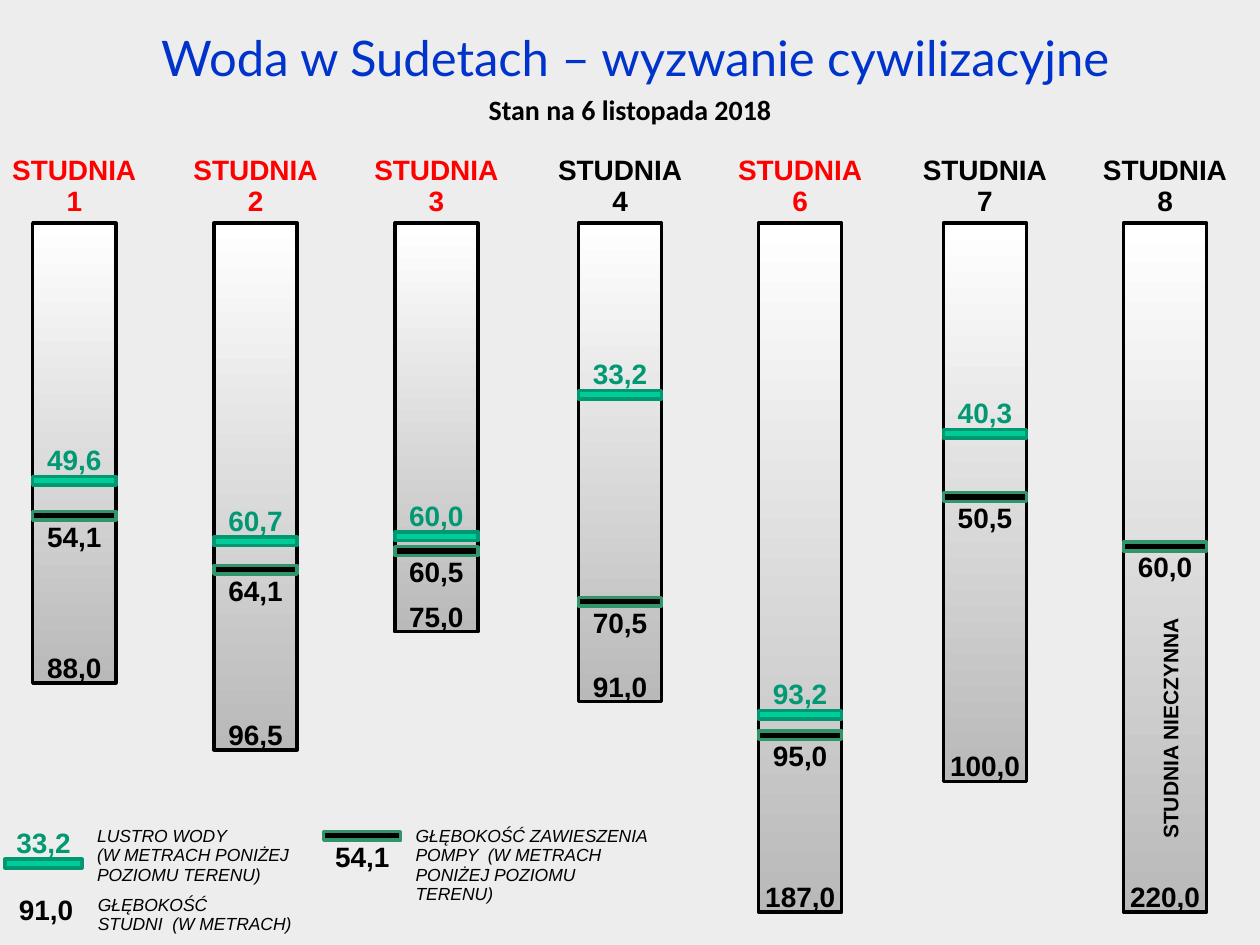
from dataclasses import dataclass
from typing import Optional

from pptx import Presentation
from pptx.dml.color import RGBColor
from pptx.enum.shapes import MSO_SHAPE as Preset
from pptx.enum.text import MSO_AUTO_SIZE as AutoSize, PP_ALIGN as Align
from pptx.util import Pt

BLACK = "000000"
RED = "FF0000"
GREEN = "009973"
WELL_TOP = 127.5
WELL_WIDTH = 47.5
MARK_HEIGHT = 5
LABEL_HEIGHT = 26.6


@dataclass
class Well:
    number: str
    left: float
    height: float
    color: str
    depth: str
    pump: str
    pump_top: float
    water: Optional[str] = None
    water_top: float = 0


@dataclass
class Style:
    size: float = 16
    color: str = BLACK
    font: str = "Arial"
    bold: bool = True
    italic: bool = False
    align: Align = Align.CENTER


@dataclass
class Mark:
    fill: str
    line: str
    text_color: str
    label_offset: float


WATER = Mark("00CC99", "009771", GREEN, -21)
PUMP = Mark(BLACK, "32946A", BLACK, 2.6)
LEGEND = Style(size=10, bold=False, italic=True, align=Align.LEFT)

WELLS = [
    Well("1", 18.7, 262.8, RED, "88,0", "54,1", 292.3, "49,6", 272.2),
    Well("2", 122.3, 301, RED, "96,5", "64,1", 323.1, "60,7", 306.8),
    Well("3", 225.6, 233.5, RED, "75,0", "60,5", 312.4, "60,0", 303.9),
    Well("4", 330.6, 273.5, BLACK, "91,0", "70,5", 341.4, "33,2", 223.1),
    Well("6", 433.5, 393.8, RED, "187,0", "95,0", 417.7, "93,2", 405.9),
    Well("7", 539.1, 319, BLACK, "100,0", "50,5", 281.5, "40,3", 245.4),
    Well("8", 642, 393.8, BLACK, "220,0", "60,0", 309.8),
]


def rgb(value: str) -> RGBColor:
    return RGBColor.from_string(value)


def add_text(slide, left: float, top: float, width: float, height: float,
             paragraphs: list[str], style: Style):
    box = slide.shapes.add_textbox(Pt(left), Pt(top), Pt(width), Pt(height))
    frame = box.text_frame
    frame.word_wrap = True
    frame.auto_size = AutoSize.SHAPE_TO_FIT_TEXT
    for index, text in enumerate(paragraphs):
        paragraph = frame.add_paragraph() if index else frame.paragraphs[0]
        paragraph.alignment = style.align
        paragraph.line_spacing = 0.93
        for line_index, line in enumerate(text.split("\n")):
            if line_index:
                paragraph.add_line_break()
            run = paragraph.add_run()
            run.text = line
            run.font.name = style.font
            run.font.size = Pt(style.size)
            run.font.bold = style.bold
            run.font.italic = style.italic
            run.font.color.rgb = rgb(style.color)
    return box


def add_label(slide, center: float, top: float, text: str, color: str) -> None:
    width = 64
    add_text(slide, center - width / 2, top, width, LABEL_HEIGHT, [text], Style(color=color))


def add_rectangle(slide, left: float, top: float, width: float, height: float, line: str):
    shape = slide.shapes.add_shape(Preset.RECTANGLE, Pt(left), Pt(top), Pt(width), Pt(height))
    shape.shadow.inherit = False
    shape.line.color.rgb = rgb(line)
    shape.line.width = Pt(2)
    return shape


def add_mark(slide, left: float, top: float, width: float, text: str, mark: Mark) -> None:
    shape = add_rectangle(slide, left, top, width, MARK_HEIGHT, mark.line)
    shape.fill.solid()
    shape.fill.fore_color.rgb = rgb(mark.fill)
    add_label(slide, left + width / 2, top + mark.label_offset, text, mark.text_color)


def add_well(slide, well: Well) -> None:
    center = well.left + WELL_WIDTH / 2
    shape = add_rectangle(slide, well.left, WELL_TOP, WELL_WIDTH, well.height, BLACK)
    shape.fill.gradient()
    shape.fill.gradient_angle = 270
    for stop, position, color in zip(shape.fill.gradient_stops, (0, 1), ("FFFFFF", "B9B9B9")):
        stop.position = position
        stop.color.rgb = rgb(color)
    if well.water:
        add_mark(slide, well.left, well.water_top, WELL_WIDTH, well.water, WATER)
    add_mark(slide, well.left, well.pump_top, WELL_WIDTH, well.pump, PUMP)
    add_text(slide, center - 46.8, 85.4, 93.6, 46, ["STUDNIA", well.number], Style(color=well.color))
    add_label(slide, center, WELL_TOP + well.height - 20.5, well.depth, BLACK)


def add_legend(slide) -> None:
    add_mark(slide, 2.9, 491, 44, "33,2", WATER)
    add_mark(slide, 185, 475.2, 44, "54,1", PUMP)
    add_label(slide, 26.3, 508.3, "91,0", BLACK)
    add_text(slide, 48.4, 468.7, 137.5, 41,
             ["LUSTRO WODY \n(W METRACH PONIŻEJ POZIOMU TERENU)"], LEGEND)
    add_text(slide, 230.4, 468.7, 150.5, 52.6,
             ["GŁĘBOKOŚĆ ZAWIESZENIA", "POMPY  (W METRACH PONIŻEJ POZIOMU TERENU)"], LEGEND)
    add_text(slide, 48.8, 508.3, 141.8, 29.5,
             ["GŁĘBOKOŚĆ \nSTUDNI  (W METRACH)"], LEGEND)


def main() -> None:
    presentation = Presentation()
    presentation.slide_width = Pt(720)
    presentation.slide_height = Pt(540)
    slide = presentation.slides.add_slide(presentation.slide_layouts[6])
    slide.background.fill.solid()
    slide.background.fill.fore_color.rgb = rgb("EDEDED")

    add_text(slide, 41.8, 15.1, 642.2, 38.2, ["Woda w Sudetach – wyzwanie cywilizacyjne"],
             Style(size=28, color="0033CC", font="Lato", bold=False))
    add_text(slide, 0, 51.1, 720, 25.2, ["Stan na 6 listopada 2018"], Style(font="Calibri"))
    add_legend(slide)
    for well in WELLS:
        add_well(slide, well)
    closed_note = add_text(slide, 591.8, 405.4, 156.2, 21.6, ["STUDNIA NIECZYNNA"], Style(size=12))
    closed_note.rotation = 270

    presentation.save("out.pptx")


if __name__ == "__main__":
    main()
